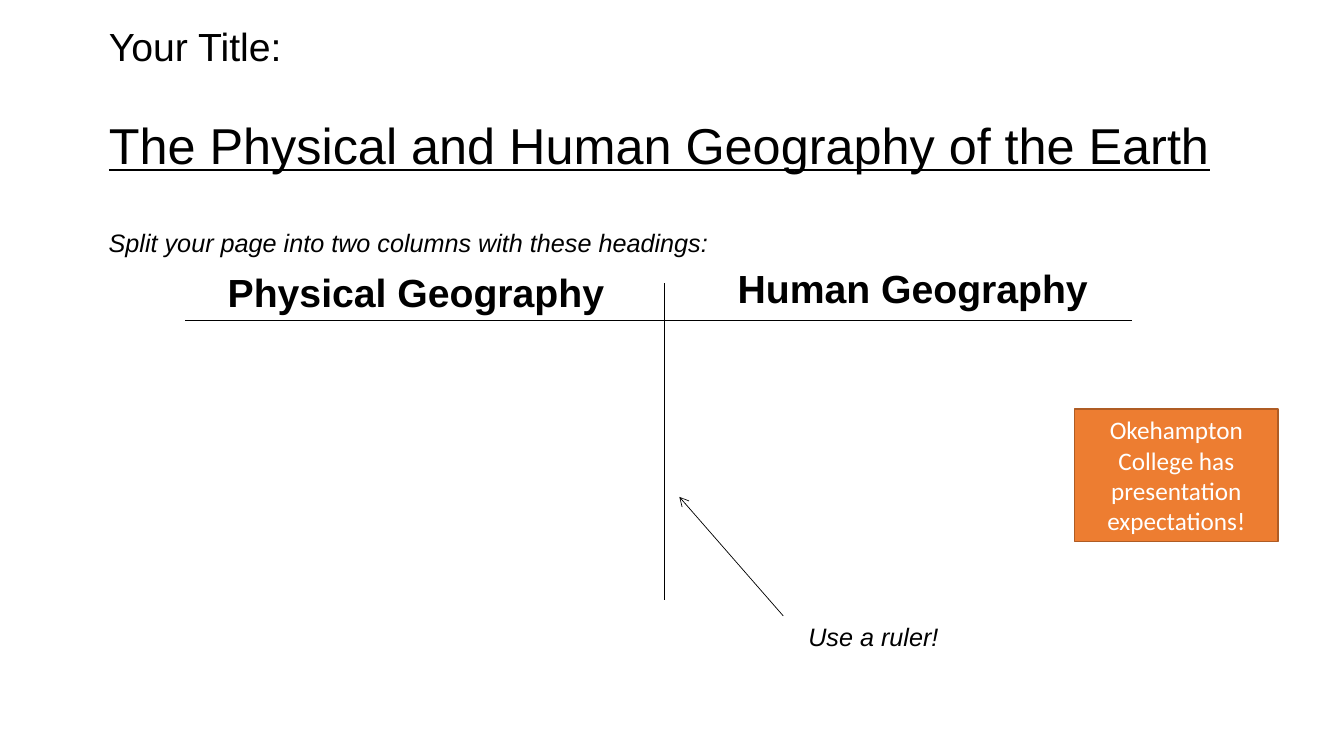
"""Build a slide on splitting a page into physical and human geography."""
from lxml import etree
from pptx import Presentation
from pptx.dml.color import RGBColor
from pptx.enum import shapes, text
from pptx.oxml import ns
from pptx.util import Cm, Pt

BLACK, WHITE, ORANGE, BROWN = "000000", "FFFFFF", "ED7D31", "AF5C24"

TITLE = [
    ("Your Title:", dict(size=28)),
    ("The Physical and Human Geography of the Earth",
     dict(size=36, under=True, before=32)),
]
TITLE_BOX = (2.49, 0.43, 28.52, 4.19)

HINT = dict(size=18, italic=True)
HEAD = dict(size=28, bold=True)
LABELS = [
    ("Split your page into two columns with these headings:",
     (2.49, 5.61, 15.62, 1.02), HINT),
    ("Physical Geography", (5.49, 6.63, 10.01, 1.45), HEAD),
    ("Human Geography", (18.34, 6.53, 9.35, 1.45), HEAD),
    ("Use a ruler!", (20.12, 15.52, 8.41, 1.02), dict(HINT, wrap=True)),
]

LINES = [
    ((16.74, 7.14, 16.74, 15.11), 0.75, False),
    ((19.74, 15.52, 17.12, 12.52), 0.5, True),
    ((4.67, 8.08, 28.52, 8.08), 0.5, False),
]

NOTE = "Okehampton College has presentation expectations!"
NOTE_BOX = (27.08, 10.31, 5.13, 3.33)


def color(code):
    return RGBColor.from_string(code)


def place(box):
    return [Cm(n) for n in box]


def write(frame, words, size=18, font="Arial", ink=BLACK, bold=False,
          italic=False, under=False, before=0, wrap=False, center=False,
          more=False):
    frame.word_wrap = wrap
    para = frame.add_paragraph() if more else frame.paragraphs[0]
    para.alignment = text.PP_ALIGN.CENTER if center else text.PP_ALIGN.LEFT
    para.space_before = Pt(before)
    run = para.add_run()
    run.text = words
    face = run.font
    face.name, face.size = font, Pt(size)
    face.bold, face.italic, face.underline = bold, italic, under
    face.color.rgb = color(ink)


def add_title(slide):
    title = slide.shapes.title
    title.left, title.top, title.width, title.height = place(TITLE_BOX)
    frame = title.text_frame
    frame.auto_size = text.MSO_AUTO_SIZE.NONE
    frame.vertical_anchor = text.MSO_ANCHOR.TOP
    for row, (words, style) in enumerate(TITLE):
        write(frame, words, more=row > 0, **style)


def add_line(slide, ends, width, arrow):
    line = slide.shapes.add_connector(
        shapes.MSO_CONNECTOR.STRAIGHT, *place(ends))
    line.line.color.rgb = color(BLACK)
    line.line.width = Pt(width)
    if arrow:
        tail = etree.SubElement(line.line._get_or_add_ln(), ns.qn("a:tailEnd"))
        tail.set("type", "arrow")
    etree.SubElement(line._element.spPr, ns.qn("a:effectLst"))


def add_note(slide):
    note = slide.shapes.add_shape(
        shapes.MSO_SHAPE.RECTANGLE, *place(NOTE_BOX))
    note.shadow.inherit = False
    note.fill.solid()
    note.fill.fore_color.rgb = color(ORANGE)
    note.line.color.rgb = color(BROWN)
    note.line.width = Pt(1)
    note.text_frame.vertical_anchor = text.MSO_ANCHOR.MIDDLE
    write(note.text_frame, NOTE, font="Calibri", ink=WHITE,
          wrap=True, center=True)


def main():
    deck = Presentation()
    deck.slide_width, deck.slide_height = Cm(33.87), Cm(19.05)
    slide = deck.slides.add_slide(deck.slide_layouts[5])
    add_title(slide)
    for words, box, style in LABELS:
        label = slide.shapes.add_textbox(*place(box))
        write(label.text_frame, words, **style)
    for ends, width, arrow in LINES:
        add_line(slide, ends, width, arrow)
    add_note(slide)
    deck.save("out.pptx")


if __name__ == "__main__":
    main()
